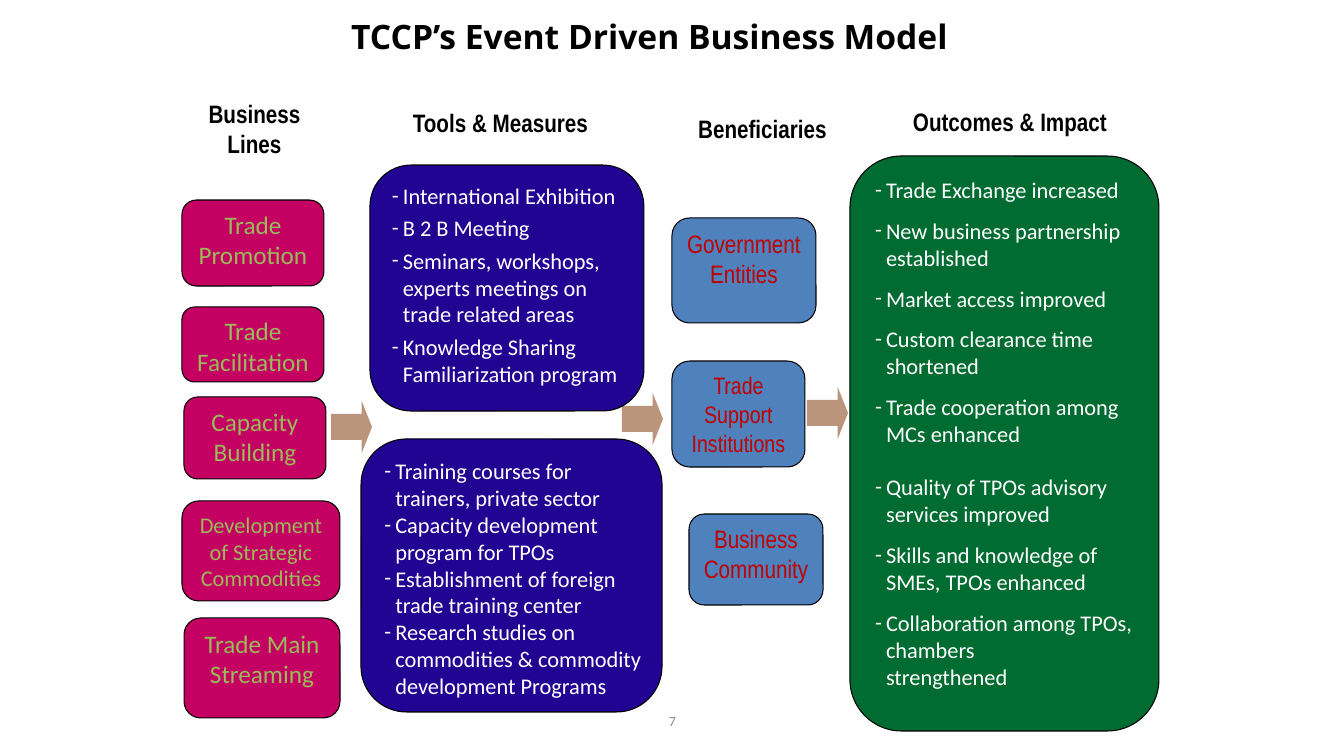
"""Build the event driven business model slide."""
from pptx import Presentation
from pptx.dml.color import RGBColor
from pptx.enum.shapes import MSO_SHAPE as Kind
from pptx.enum.text import MSO_ANCHOR as Anchor, PP_ALIGN as Align
from pptx.oxml.ns import qn
from pptx.util import Pt
from lxml.etree import SubElement

PX = 914400 / 100.8


def px(*nums):
    """Turn px lengths into EMU."""
    return [round(n * PX) for n in nums]


def write(shape, rows, face, size, tint, bold=False, gap=None, anchor=Anchor.TOP):
    """Fill a shape with centred rows, or with a dashed list if gap is given."""
    frame = shape.text_frame
    frame.word_wrap = True
    frame.vertical_anchor = anchor
    frame.text = "\n".join(rows)
    for i, para in enumerate(frame.paragraphs):
        para.alignment = Align.CENTER if gap is None else Align.LEFT
        if gap is not None:
            props = para._p.get_or_add_pPr()
            hang = px(11)[0]
            props.set("marL", str(hang))
            props.set("indent", str(-hang))
            SubElement(props, qn("a:buFont"), typeface="Calibri")
            SubElement(props, qn("a:buChar"), char="-")
            if i:
                para.space_before = Pt(gap[i] if isinstance(gap, list) else gap)
        font = para.font
        font.name, font.size, font.bold = face, Pt(size), bold
        font.color.rgb = RGBColor.from_string(tint)


deck = Presentation()
deck.slide_width, deck.slide_height = px(1344, 756)
slide = deck.slides.add_slide(deck.slide_layouts[5])
shapes = slide.shapes

title = shapes.title
title.left, title.top, title.width, title.height = px(199, 0, 901, 73)
write(title, ["TCCP’s Event Driven Business Model"], "Open Sans", 24, "000000",
      True, anchor=Anchor.MIDDLE)

heads = [
    ((172, 93, 165, 72), ["Business", "Lines"]),
    ((398, 102, 205, 40), ["Tools & Measures"]),
    ((684, 108, 157, 40), ["Beneficiaries"]),
    ((900, 101, 220, 40), ["Outcomes & Impact"]),
]
for spot, rows in heads:
    write(shapes.add_textbox(*px(*spot)), rows, "Arial Narrow", 18, "000000", True)

for x, y in [(331, 401), (622, 393), (807, 387)]:
    arrow = shapes.add_shape(Kind.RIGHT_ARROW, *px(x, y, 41, 52))
    arrow.adjustments[0], arrow.adjustments[1] = 0.5, 0.25
    arrow.shadow.inherit = False
    arrow.fill.solid()
    arrow.fill.fore_color.rgb = RGBColor.from_string("BA957C")
    arrow.line.fill.background()

line = ("C40063", "Calibri", "9BBB59")
group = ("4F81BD", "Arial Narrow", "C00000")
tool = ("220492", "Calibri", "FFFFFF")
result = ("006C31", "Calibri", "FFFFFF")
boxes = [
    (line, (182, 200, 142, 86), 18, None, ["Trade\vPromotion"]),
    (line, (182, 307, 142, 75), 18, None, ["Trade\vFacilitation"]),
    (line, (184, 397, 142, 82), 18, None, ["Capacity\vBuilding"]),
    (line, (182, 501, 158, 100), 16, None, ["Development\vof Strategic\vCommodities"]),
    (line, (184, 618, 156, 100), 18, None, ["Trade Main\vStreaming"]),
    (group, (672, 218, 144, 105), 18, None, ["Government\vEntities"]),
    (group, (672, 361, 133, 106), 17, None, ["Trade\vSupport\vInstitutions"]),
    (group, (689, 514, 134, 91), 18, None, ["Business\vCommunity"]),
    (tool, (370, 165, 274, 246), 16, 4, [
        "International Exhibition",
        "B 2 B Meeting",
        "Seminars, workshops,\vexperts meetings on\vtrade related areas",
        "Knowledge Sharing\vFamiliarization program",
    ]),
    (tool, (361, 439, 301, 273), 16, 0, [
        "Training courses for\vtrainers, private sector",
        "Capacity development\vprogram for TPOs",
        "Establishment of foreign\vtrade training center",
        "Research studies on\vcommodities & commodity\vdevelopment Programs",
    ]),
    (result, (850, 156, 309, 575), 16, [0, 10, 10, 10, 10, 19, 10, 10], [
        "Trade Exchange increased",
        "New business partnership\vestablished",
        "Market access improved",
        "Custom clearance time\vshortened",
        "Trade cooperation among\vMCs enhanced",
        "Quality of TPOs advisory\vservices improved",
        "Skills and knowledge of\vSMEs, TPOs enhanced",
        "Collaboration among TPOs,\vchambers\vstrengthened",
    ]),
]
for (fill, face, tint), spot, size, gap, rows in boxes:
    box = shapes.add_shape(Kind.ROUNDED_RECTANGLE, *px(*spot))
    box.shadow.inherit = False
    box.fill.solid()
    box.fill.fore_color.rgb = RGBColor.from_string(fill)
    box.line.color.rgb = RGBColor.from_string("000000")
    box.line.width = Pt(0.75)
    write(box, rows, face, size, tint, gap=gap)
    frame = box.text_frame
    frame.margin_left, frame.margin_right = px(4 if gap is None else 10, 4)

page = shapes.add_textbox(*px(460, 701, 425, 40))
write(page, ["7"], "Calibri", 10, "8C8C8C", anchor=Anchor.MIDDLE)

deck.save("out.pptx")
